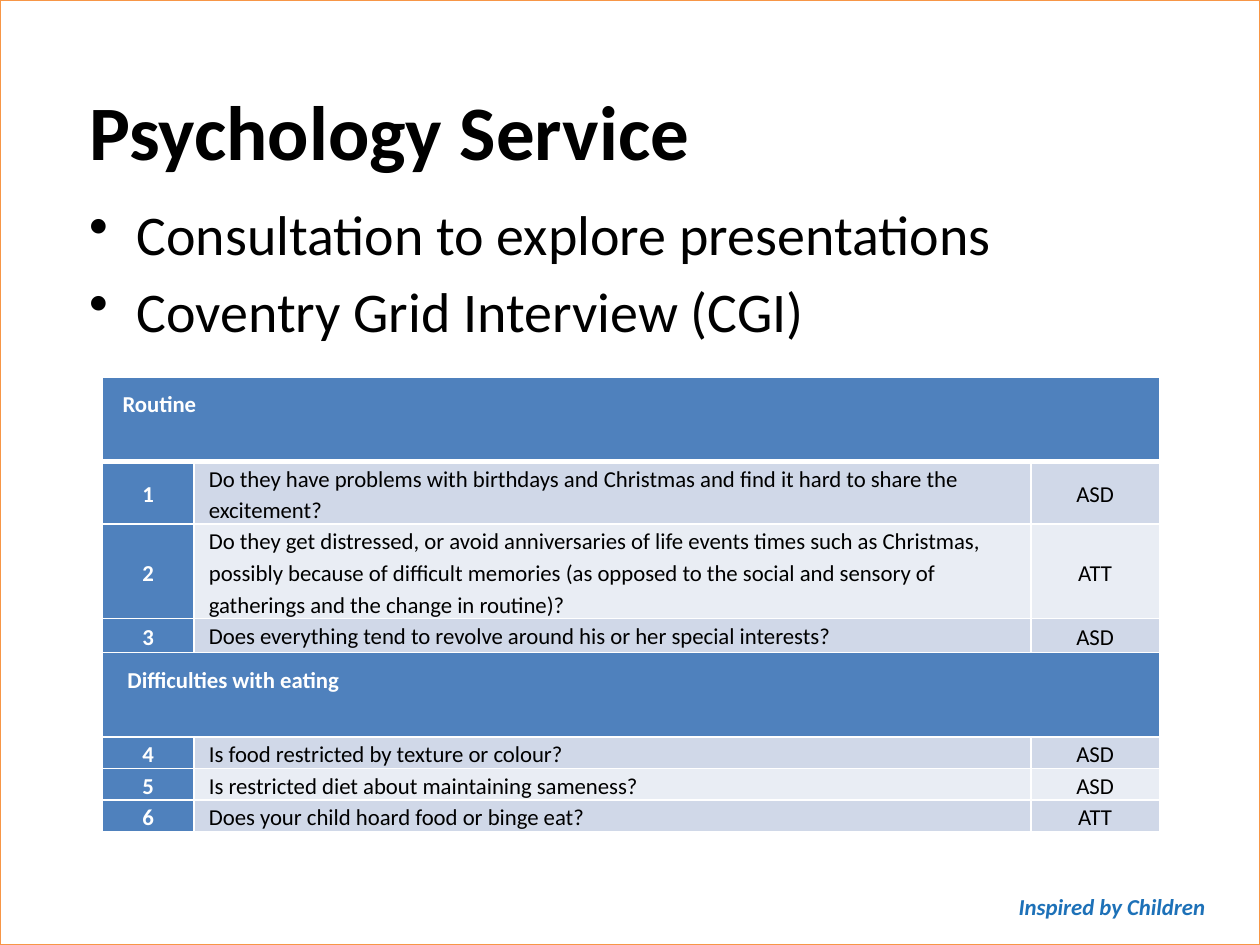
"""Build the Psychology Service slide with its interview table."""
import pptx
import pptx.dml.color
import pptx.enum.shapes
import pptx.enum.text
import pptx.oxml
import pptx.oxml.ns
import pptx.util

Cm = pptx.util.Cm
Pt = pptx.util.Pt
RGB = pptx.dml.color.RGBColor
ALIGN = pptx.enum.text.PP_ALIGN
ANCHOR = pptx.enum.text.MSO_ANCHOR

BLACK = RGB(0x00, 0x00, 0x00)
WHITE = RGB(0xFF, 0xFF, 0xFF)
ORANGE = RGB(0xF7, 0x96, 0x46)
BLUE = RGB(0x4F, 0x81, 0xBD)
SLOGAN = RGB(0x1D, 0x71, 0xB8)
DARK = RGB(0xD0, 0xD8, 0xE8)
LIGHT = RGB(0xE9, 0xED, 0xF4)

FONT = "Calibri"
WIDTHS = (1.85, 16.87, 2.59)
GROUPS = (
    ("Routine", 0.41, (
        ("Do they have problems with birthdays and Christmas and find it "
         "hard to share the excitement?", "ASD", 0.71),
        ("Do they get distressed, or avoid anniversaries of life events times "
         "such as Christmas, possibly because of difficult memories (as "
         "opposed to the social and sensory of gatherings and the change "
         "in routine)?", "ATT", 1.37),
        ("Does everything tend to revolve around his or her special "
         "interests?", "ASD", 0.69),
    )),
    ("Difficulties with eating", 0.51, (
        ("Is food restricted by texture or colour?", "ASD", 0.46),
        ("Is restricted diet about maintaining sameness?", "ASD", 0.46),
        ("Does your child hoard food or binge eat?", "ATT", 0.46),
    )),
)


def add_run(para, text, size, color, bold=False, italic=False):
    """Add one styled run to a paragraph."""
    run = para.add_run()
    run.text = text
    font = run.font
    font.name, font.size = FONT, Pt(size)
    font.bold, font.italic = bold, italic
    font.color.rgb = color


def add_box(slide, left, top, width, height):
    """Add a wrapping text box and return its text frame."""
    box = slide.shapes.add_textbox(Cm(left), Cm(top), Cm(width), Cm(height))
    box.text_frame.word_wrap = True
    return box.text_frame


def add_frame(slide, width, height):
    """Add the thin border around the slide."""
    rect = slide.shapes.add_shape(
        pptx.enum.shapes.MSO_SHAPE.RECTANGLE, 0, 0, width, height)
    rect.shadow.inherit = False
    rect.fill.solid()
    rect.fill.fore_color.rgb = WHITE
    rect.line.color.rgb = ORANGE
    rect.line.width = Pt(0.75)


def add_list(frame, items):
    """Fill a text frame with bulleted paragraphs."""
    for i, text in enumerate(items):
        para = frame.add_paragraph() if i else frame.paragraphs[0]
        props = para._p.get_or_add_pPr()
        props.set("marL", str(Cm(0.95)))
        props.set("indent", str(-Cm(0.95)))
        mark = pptx.oxml.ns.qn("a:buChar")
        props.append(props.makeelement(mark, {"char": "•"}))
        if i:
            para.space_before = Pt(6)
        add_run(para, text, 32, BLACK)


def set_edges(cell, base):
    """Draw white cell borders, with the bottom one of a given width."""
    props = cell._tc.get_or_add_tcPr()
    for i, side in enumerate("LRTB"):
        width = Pt(base if side == "B" else 1)
        props.insert(i, pptx.oxml.parse_xml(
            f'<a:ln{side} {pptx.oxml.ns.nsdecls("a")} w="{width}"><a:solidFill>'
            f'<a:srgbClr val="{WHITE}"/></a:solidFill></a:ln{side}>'))


def fill_cell(cell, text, fill, color, align, inset=0.3, pad=0,
              anchor=ANCHOR.MIDDLE, base=1):
    """Write and style one table cell."""
    cell.fill.solid()
    cell.fill.fore_color.rgb = fill
    set_edges(cell, base)
    cell.margin_left = cell.margin_right = Cm(inset)
    cell.margin_top = cell.margin_bottom = Cm(pad)
    cell.vertical_anchor = anchor
    para = cell.text_frame.paragraphs[0]
    para.alignment = align
    para.line_spacing = 1.15
    para.space_after = Pt(10)
    add_run(para, text, 13, color, bold=color == WHITE)


def add_head(table, row, text, inset):
    """Fill a heading row that spans the table."""
    table.rows[row].height = Cm(1.7)
    cell = table.cell(row, 0)
    cell.merge(table.cell(row, len(WIDTHS) - 1))
    fill_cell(cell, text, BLUE, WHITE, ALIGN.JUSTIFY, inset, 0.2,
              ANCHOR.TOP, 1 if row else 3)


def add_grid(slide):
    """Add the interview table with its numbered questions."""
    count = sum(1 + len(rows) for _, _, rows in GROUPS)
    table = slide.shapes.add_table(
        count, len(WIDTHS), Cm(2.06), Cm(7.6), Cm(sum(WIDTHS)), Cm(7.5)).table
    for col, width in zip(table.columns, WIDTHS):
        col.width = Cm(width)
    row = num = 0
    for title, inset, rows in GROUPS:
        add_head(table, row, title, inset)
        for i, (ask, code, height) in enumerate(rows):
            row += 1
            num += 1
            table.rows[row].height = Cm(height)
            band = LIGHT if i % 2 else DARK
            fill_cell(table.cell(row, 0), str(num), BLUE, WHITE, ALIGN.CENTER)
            fill_cell(table.cell(row, 1), ask, band, BLACK, ALIGN.LEFT,
                      anchor=ANCHOR.TOP)
            fill_cell(table.cell(row, 2), code, band, BLACK, ALIGN.CENTER)
        row += 1


def main():
    """Build and save the slide."""
    deck = pptx.Presentation()
    deck.slide_width, deck.slide_height = Cm(25.4), Cm(19.05)
    slide = deck.slides.add_slide(deck.slide_layouts[6])
    add_frame(slide, deck.slide_width, deck.slide_height)
    para = add_box(slide, 19.4, 17.88, 5.14, 0.81).paragraphs[0]
    para.alignment = ALIGN.RIGHT
    add_run(para, "Inspired by Children", 13, SLOGAN, True, True)
    title = add_box(slide, 1.55, 1.55, 20.4, 2.34)
    add_run(title.paragraphs[0], "Psychology Service", 44, BLACK, True)
    add_list(add_box(slide, 1.55, 3.89, 22.3, 13.61), (
        "Consultation to explore presentations",
        "Coventry Grid Interview (CGI)"))
    add_grid(slide)
    deck.save("out.pptx")


if __name__ == "__main__":
    main()
